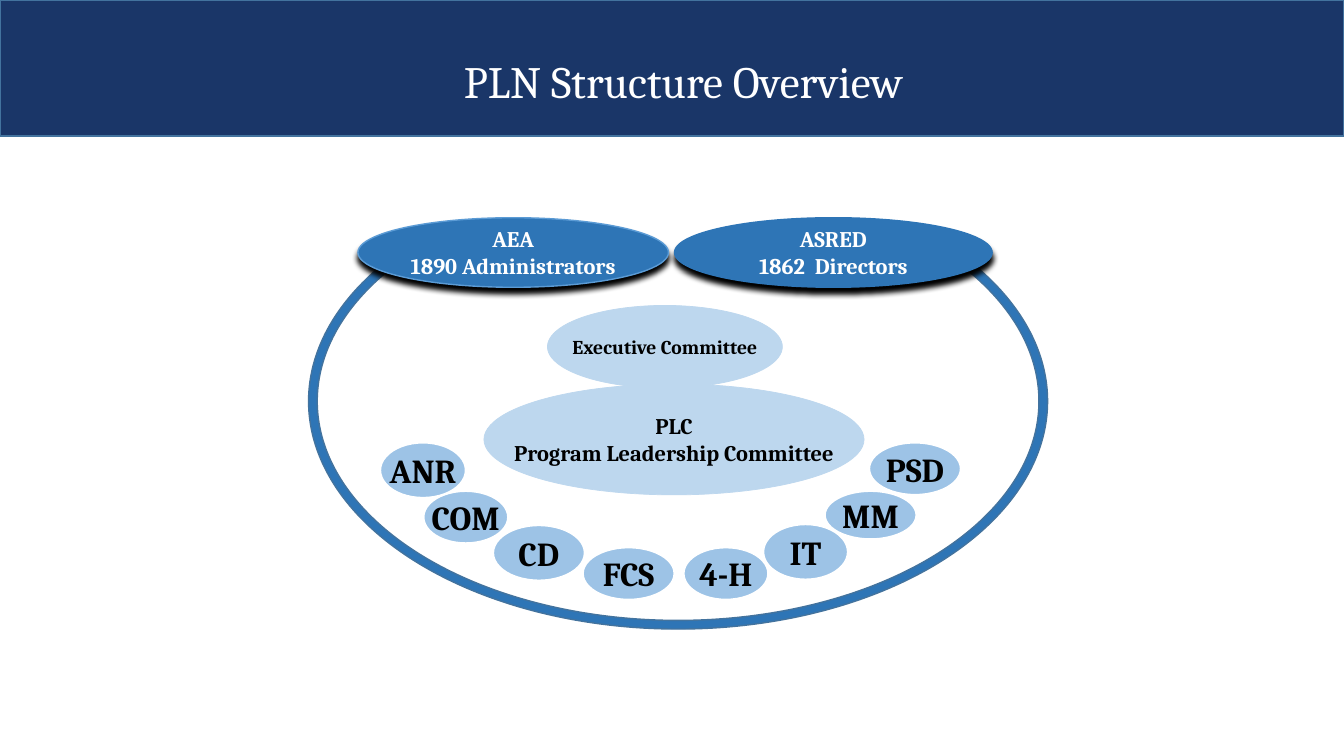
from lxml.etree import SubElement
from pptx import Presentation
from pptx.dml.color import RGBColor
from pptx.enum.shapes import MSO_SHAPE
from pptx.enum.text import MSO_ANCHOR, PP_ALIGN
from pptx.oxml.ns import qn
from pptx.util import Inches, Pt

FONT = "Cambria"
COLORS = {
    "navy": "1A3668", "border": "43739E", "blue": "2E75B6", "sky": "5B9BD5",
    "pale": "BDD7EE", "light": "9DC3E6", "white": "FFFFFF", "black": "000000",
}
TITLE = "PLN Structure Overview"
ASSOCIATIONS = [
    ("ASRED\n1862  Directors", (6.69, 2.16, 3.15, 0.69), "blue"),
    ("AEA\n1890 Administrators", (3.55, 2.16, 3.08, 0.69), "sky"),
]
COMMITTEES = [
    ("PLC\nProgram Leadership Committee", (4.8, 3.81, 3.77, 1.1), 16),
    ("Executive Committee", (5.43, 3.03, 2.33, 0.82), 14),
]
PROGRAMS = [
    ("COM", (4.2, 4.87, 0.84, 0.52)),
    ("ANR", (3.77, 4.39, 0.85, 0.55)),
    ("CD", (4.89, 5.21, 0.91, 0.55)),
    ("FCS", (5.78, 5.43, 0.91, 0.52)),
    ("4-H", (6.78, 5.43, 0.84, 0.52)),
    ("MM", (8.18, 4.87, 0.91, 0.48)),
    ("PSD", (8.62, 4.39, 0.91, 0.52)),
    ("IT", (7.57, 5.2, 0.84, 0.55)),
]


def color(name):
    return RGBColor.from_string(COLORS[name])


def add_shape(slide, kind, box, fill, line, width):
    shape = slide.shapes.add_shape(kind, *map(Inches, box))
    shape.shadow.inherit = False
    shape.fill.solid()
    shape.fill.fore_color.rgb = color(fill)
    shape.line.color.rgb = color(line)
    shape.line.width = Pt(width)
    return shape


def write(shape, text, size, text_color, bold):
    frame = shape.text_frame
    frame.text = text
    frame.vertical_anchor = MSO_ANCHOR.MIDDLE
    for paragraph in frame.paragraphs:
        paragraph.alignment = PP_ALIGN.CENTER
        for run in paragraph.runs:
            run.font.name = FONT
            run.font.size = Pt(size)
            run.font.bold = bold
            run.font.color.rgb = color(text_color)


def add_oval(slide, text, box, fill, line, width, size, text_color="black"):
    oval = add_shape(slide, MSO_SHAPE.OVAL, box, fill, line, width)
    write(oval, text, size, text_color, True)
    oval.text_frame.word_wrap = False
    return oval


def add_shadow(shape):
    effects = shape._element.spPr.find(qn("a:effectLst"))
    shadow = SubElement(effects, qn("a:outerShdw"), blurRad=str(Pt(4)),
                        dist=str(Pt(4)), dir="5400000", rotWithShape="0")
    SubElement(shadow, qn("a:srgbClr"), val=COLORS["black"])


def main():
    presentation = Presentation()
    presentation.slide_width = Inches(13.33)
    presentation.slide_height = Inches(7.5)
    slide = presentation.slides.add_slide(presentation.slide_layouts[5])

    banner = add_shape(slide, MSO_SHAPE.RECTANGLE, (0, 0, 13.33, 1.35), "navy", "border", 1)
    title = slide.shapes.title
    banner._element.addnext(title._element)
    title.left, title.top, title.width, title.height = map(Inches, (3.82, 0.11, 5.92, 1.45))
    write(title, TITLE, 32, "white", False)
    title.text_frame.paragraphs[0].line_spacing = 0.9

    ring = add_shape(slide, MSO_SHAPE.BLOCK_ARC, (3.06, 1.72, 7.33, 4.52), "blue", "border", 1)
    ring.rotation = 180
    for index, value in enumerate((91.307, 13.958, 0.019)):
        ring.adjustments[index] = value

    for text, box, line in ASSOCIATIONS:
        add_shadow(add_oval(slide, text, box, "blue", line, 1, 16, "white"))
    leadership, executive = COMMITTEES
    add_oval(slide, *leadership[:2], "pale", "pale", 0.5, leadership[2])
    for text, box in PROGRAMS:
        add_oval(slide, text, box, "light", "white", 1.5, 24)
    add_oval(slide, *executive[:2], "pale", "pale", 0.5, executive[2])

    presentation.save("out.pptx")


if __name__ == "__main__":
    main()
